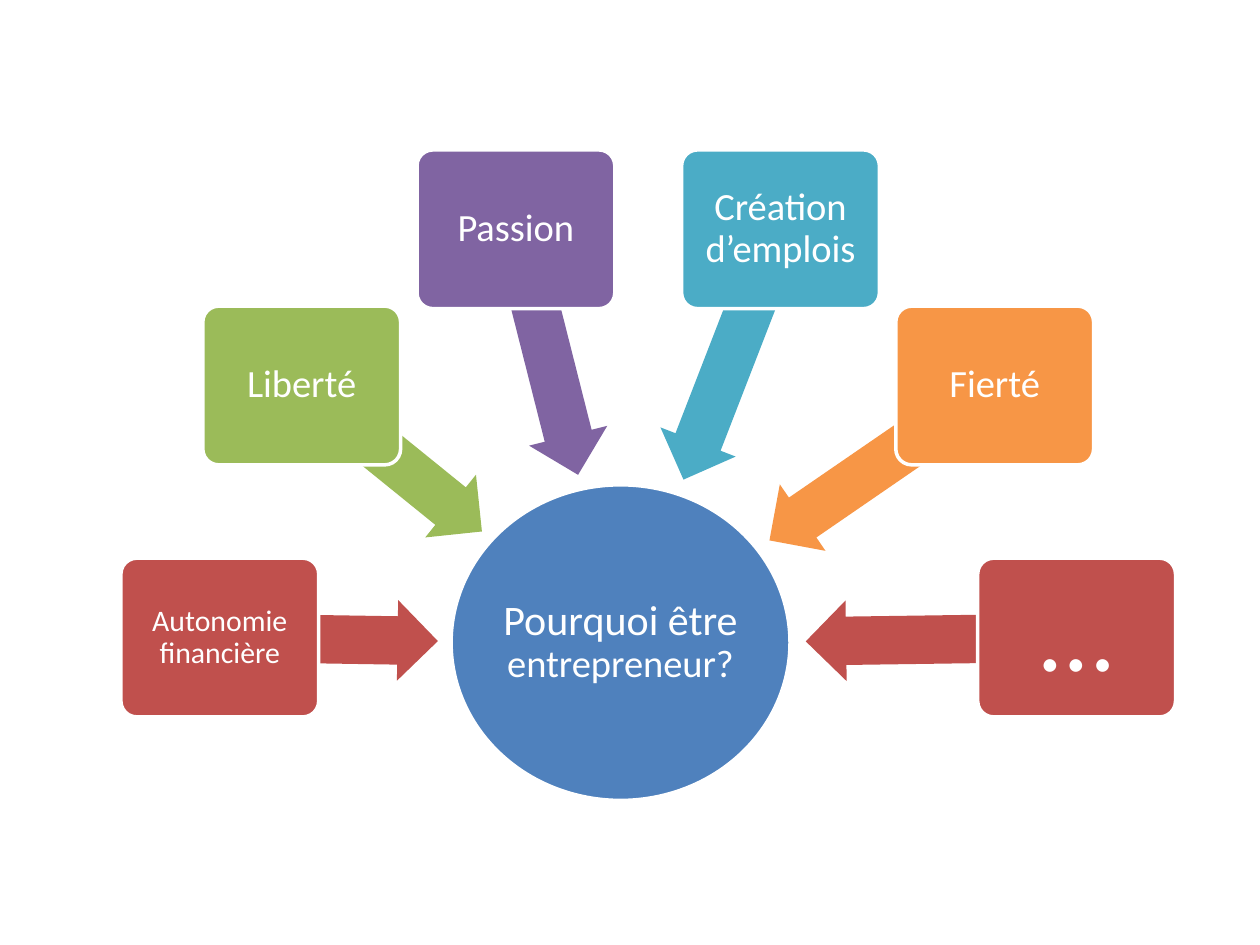
from dataclasses import dataclass
from math import cos, radians, sin

from pptx import Presentation
from pptx.dml.color import RGBColor
from pptx.enum.shapes import MSO_SHAPE as Kind
from pptx.enum.text import MSO_ANCHOR as Anchor, PP_ALIGN as Align
from pptx.util import Inches, Pt

WIDE, HIGH = 10, 7.5
COL, ROW = WIDE / 100, HIGH / 100
WHITE, BLUE, RED = "FFFFFF", "4F81BD", "C0504D"
MID = 51.45
TOP, NEXT, LOW = 24.27, 40.8, 67.47
BOX_W, BOX_H = 15.7, 16.8
THICK = 0.64


@dataclass
class Reason:
    text: str
    shift: float
    row: float
    fill: str
    turn: float
    reach: float
    size: float = 22
    inset: float = 0.05


REASONS = [
    Reason("Autonomie financière", -34, LOW, RED, 0.9, 17.3, 17, 0.04),
    Reason("Liberté", -27.5, NEXT, "9BBB59", 39, 18.4),
    Reason("Passion", -10.5, TOP, "8064A2", 75.8, 20.1),
    Reason("Création d’emplois", 10.5, TOP, "4BACC6", 111.2, 21.3),
    Reason("Fierté", 27.5, NEXT, "F79646", 145.5, 21.7),
    Reason("…", 34, LOW, RED, 179.2, 21.5, 60, 0.12),
]


def paint(hue: str) -> RGBColor:
    return RGBColor.from_string(hue)


def place(slide, kind: Kind, x: float, y: float, w: float, h: float, hue: str):
    shape = slide.shapes.add_shape(
        kind, Inches(x - w / 2), Inches(y - h / 2), Inches(w), Inches(h))
    shape.shadow.inherit = False
    shape.fill.solid()
    shape.fill.fore_color.rgb = paint(hue)
    return shape


def edge(shape) -> None:
    shape.line.color.rgb = paint(WHITE)
    shape.line.width = Pt(2)


def write(shape, runs: list[tuple[str, float]], inset: float) -> None:
    frame = shape.text_frame
    frame.word_wrap = True
    frame.vertical_anchor = Anchor.MIDDLE
    frame.margin_left = frame.margin_right = Inches(inset)
    frame.margin_top = frame.margin_bottom = Inches(inset)
    para = frame.paragraphs[0]
    para.alignment = Align.CENTER
    para.line_spacing = 0.9
    para.font.name = "Calibri"
    para.font.color.rgb = paint(WHITE)
    for text, size in runs:
        run = para.add_run()
        run.text = text
        run.font.size = Pt(size)


def draw_hub(slide) -> None:
    hub = place(slide, Kind.OVAL, 49.25 * COL, 68 * ROW,
                26.9 * COL, 33.4 * ROW, BLUE)
    edge(hub)
    write(hub, [("Pourquoi être ", 24), ("entrepreneur?", 22)], 0.02)


def draw_reason(slide, item: Reason) -> None:
    x, y = (MID + item.shift) * COL, item.row * ROW
    reach, turn = item.reach * COL, radians(item.turn)
    arrow = place(slide, Kind.LEFT_ARROW, x + reach / 2 * cos(turn),
                  y + reach / 2 * sin(turn), reach, THICK, item.fill)
    arrow.adjustments[0] = 0.6
    arrow.adjustments[1] = 0.5
    arrow.rotation = 180 + item.turn
    arrow.line.fill.background()

    box = place(slide, Kind.ROUNDED_RECTANGLE, x, y,
                BOX_W * COL, BOX_H * ROW, item.fill)
    box.adjustments[0] = 0.1
    edge(box)
    write(box, [(item.text, item.size)], item.inset)


def main() -> None:
    deck = Presentation()
    deck.slide_width, deck.slide_height = Inches(WIDE), Inches(HIGH)
    slide = deck.slides.add_slide(deck.slide_layouts[6])
    draw_hub(slide)
    for item in REASONS:
        draw_reason(slide, item)
    deck.save("out.pptx")


if __name__ == "__main__":
    main()
